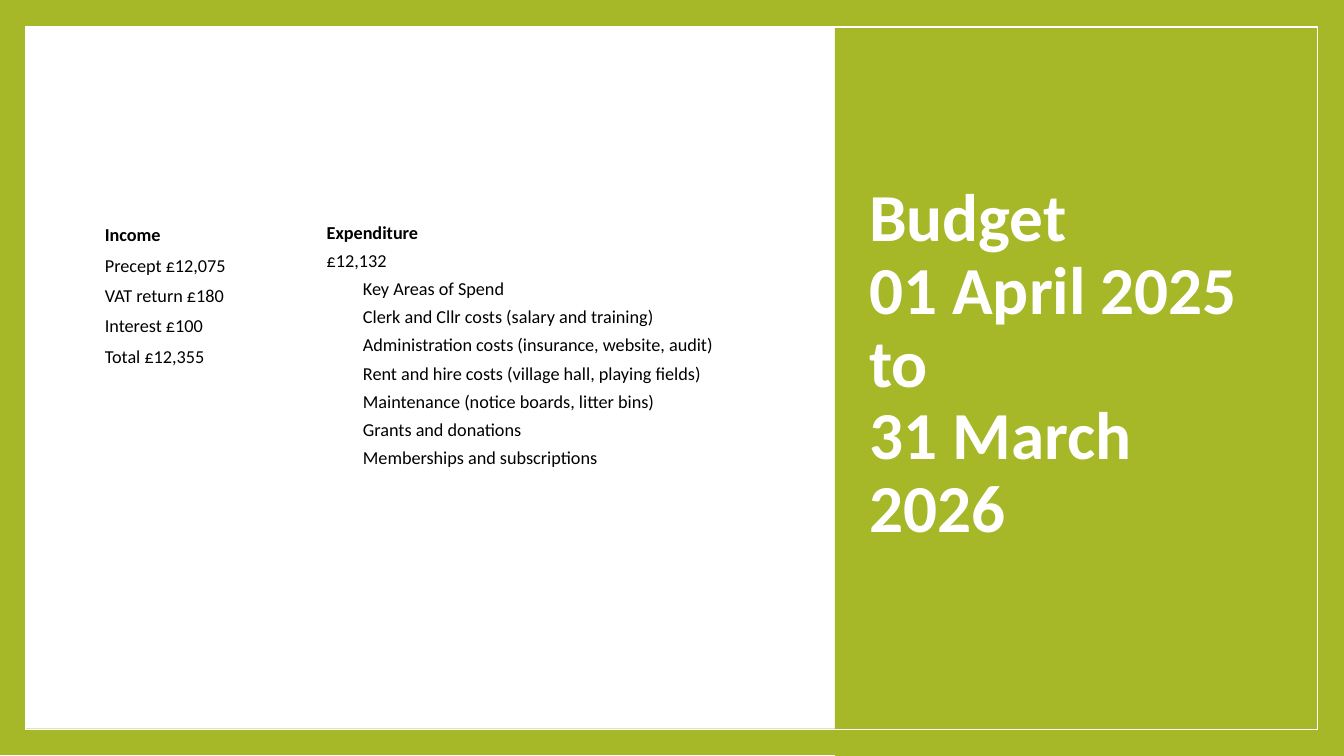
"""Build the parish budget slide for 2025 to 2026."""
from pptx import Presentation
from pptx.dml.color import RGBColor
from pptx.enum.shapes import MSO_SHAPE
from pptx.enum.text import MSO_ANCHOR, MSO_AUTO_SIZE, PP_ALIGN
from pptx.util import Inches, Pt

TITLE = ["Budget ", "01 April 2025 ", "to ", "31 March 2026"]
INCOME = [
    ("Income", 0),
    ("Precept £12,075", 0),
    ("VAT return £180", 0),
    ("Interest £100", 0),
    ("Total £12,355", 0),
]
SPEND = [
    ("Expenditure", 0),
    ("£12,132", 0),
    ("Key Areas of Spend", 1),
    ("Clerk and Cllr costs (salary and training)", 1),
    ("Administration costs (insurance, website, audit)", 1),
    ("Rent and hire costs (village hall, playing fields)", 1),
    ("Maintenance (notice boards, litter bins)", 1),
    ("Grants and donations", 1),
    ("Memberships and subscriptions", 1),
]
THEME = {
    "green": RGBColor(0xA6, 0xB7, 0x27),
    "white": RGBColor(0xFF, 0xFF, 0xFF),
    "black": RGBColor(0, 0, 0),
    "font": "Calibri",
    "title": Pt(48),
    "body": Pt(13),
}
PANELS = [
    ((0, -0.01, 13.33, 7.5), "green", None),
    ((0.25, 0.26, 12.82, 6.97), "white", None),
    ((8.28, 0, 5.06, 7.5), "green", None),
    ((0.25, 0.27, 12.82, 6.97), None, "white"),
]
LISTS = [
    (1, (0.94, 2.17, 3.31, 3.07), INCOME, 1.0),
    (2, (3.14, 2.17, 4.42, 3.2), SPEND, 0.9),
]


def place(shape, box):
    shape.left, shape.top, shape.width, shape.height = map(Inches, box)


def style(para, size, color, bold, lead):
    para.alignment = PP_ALIGN.LEFT
    para.line_spacing = lead
    para.space_before = Pt(0)
    font = para.font
    font.name, font.size, font.bold = THEME["font"], THEME[size], bold
    font.color.rgb = THEME[color]


def add_panel(slide, box, fill, line):
    panel = slide.shapes.add_shape(MSO_SHAPE.RECTANGLE, *map(Inches, box))
    panel.shadow.inherit = False
    if fill:
        panel.fill.solid()
        panel.fill.fore_color.rgb = THEME[fill]
    else:
        panel.fill.background()
    if line:
        panel.line.color.rgb = THEME[line]
        panel.line.width = Pt(1)
    else:
        panel.line.fill.background()
    slide.shapes.title.element.addprevious(panel.element)


def set_frame(shape, box, anchor):
    place(shape, box)
    frame = shape.text_frame
    frame.word_wrap = True
    frame.auto_size = MSO_AUTO_SIZE.NONE
    frame.vertical_anchor = anchor
    return frame


def fill_title(title):
    frame = set_frame(title, (8.52, 0.67, 4.12, 5.91), MSO_ANCHOR.MIDDLE)
    para = frame.paragraphs[0]
    for i, line in enumerate(TITLE):
        if i:
            para.add_line_break()
        para.add_run().text = line
    style(para, "title", "white", True, 0.9)


def fill_list(shape, box, rows, lead):
    frame = set_frame(shape, box, MSO_ANCHOR.TOP)
    frame.text = "\n".join(text for text, level in rows)
    for i, (para, (text, level)) in enumerate(zip(frame.paragraphs, rows)):
        para.level = level
        style(para, "body", "black", i == 0, lead)
        para.space_after = Pt(6)
        props = para._p.get_or_add_pPr()
        props.set("marL", str(Inches(0.36 * level)))
        props.set("indent", "0")
        mark = props.makeelement(
            "{http://schemas.openxmlformats.org/drawingml/2006/main}buNone", {})
        props.find("{*}defRPr").addprevious(mark)


def main():
    deck = Presentation()
    deck.slide_width, deck.slide_height = Inches(13.33), Inches(7.5)
    slide = deck.slides.add_slide(deck.slide_layouts[3])
    for panel in PANELS:
        add_panel(slide, *panel)
    fill_title(slide.shapes.title)
    for key, box, rows, lead in LISTS:
        fill_list(slide.placeholders[key], box, rows, lead)
    deck.save("out.pptx")


if __name__ == "__main__":
    main()
